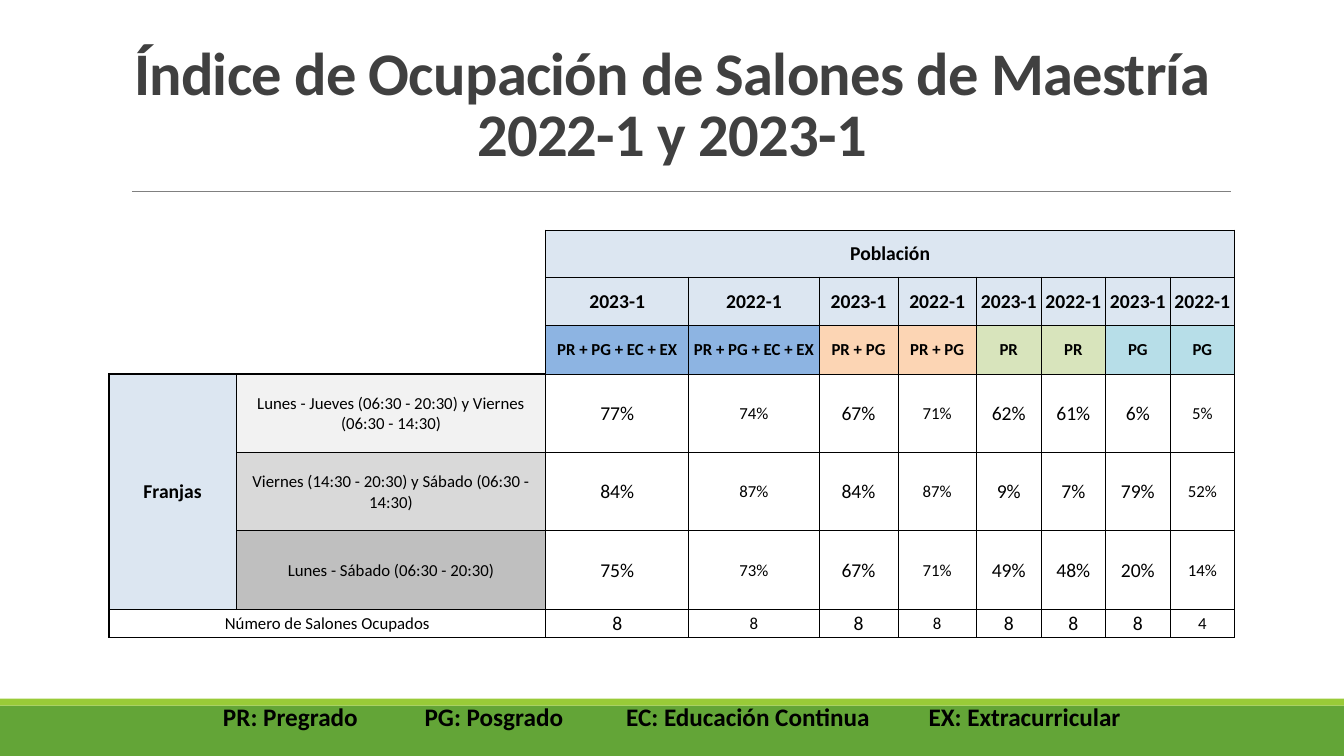
from dataclasses import dataclass

from lxml import etree
from pptx import Presentation
from pptx.dml.color import RGBColor
from pptx.enum.shapes import MSO_CONNECTOR, MSO_SHAPE
from pptx.enum.text import MSO_ANCHOR, PP_ALIGN
from pptx.oxml.ns import qn
from pptx.util import Pt

RECTANGLE = MSO_SHAPE.RECTANGLE
STRAIGHT = MSO_CONNECTOR.STRAIGHT
CENTER = PP_ALIGN.CENTER
MIDDLE, BOTTOM = MSO_ANCHOR.MIDDLE, MSO_ANCHOR.BOTTOM


@dataclass(frozen=True)
class Theme:
    font: str = "Calibri"
    title_size: float = 43.2
    legend_size: float = 18
    large: float = 14
    small: float = 12
    text: str = "000000"
    title: str = "404040"
    rule: str = "808080"
    band: str = "63A537"
    band_edge: str = "99CB38"
    blank: str = "FFFFFF"
    header: str = "DCE6F1"
    populations: tuple = ("8DB4E2", "FCD5B4", "D8E4BC", "B7DEE8")
    slots: tuple = ("F2F2F2", "D9D9D9", "BFBFBF")


@dataclass(frozen=True)
class Box:
    left: float
    top: float
    width: float
    height: float

    def lengths(self):
        return [Pt(n) for n in (self.left, self.top, self.width, self.height)]


THEME = Theme()
TITLE = "Índice de Ocupación de Salones de Maestría\v2022-1 y 2023-1"
LEGEND = "PR: Pregrado\tPG: Posgrado\tEC: Educación Continua\tEX: Extracurricular"
LEGEND_TABS = (144, 288, 504)
POPULATIONS = ("PR + PG + EC + EX", "PR + PG", "PR", "PG")
SLOTS = (
    "Lunes - Jueves (06:30 - 20:30) y Viernes (06:30 - 14:30)",
    "Viernes (14:30 - 20:30) y Sábado (06:30 - 14:30)",
    "Lunes - Sábado (06:30 - 20:30)",
)
RATES = (
    (77, 74, 67, 71, 62, 61, 6, 5),
    (84, 87, 84, 87, 9, 7, 79, 52),
    (75, 73, 67, 71, 49, 48, 20, 14),
)
ROOMS = (8, 8, 8, 8, 8, 8, 8, 4)
COLUMN_WIDTHS = (91, 221, 102.2, 93.2, 56.2, 56.2, 46.1, 46.1, 46.1, 46.1)
ROW_HEIGHTS = (33.6, 34.2, 35, 56, 56, 56, 20)
SMALL_COLUMNS = (3, 5, 9)
FIRST_SLOT, LAST_ROW, LAST_COLUMN = 3, 6, 9
THICK, THIN, NONE = 1, 0.5, 0


def color(code):
    return RGBColor.from_string(code)


def style(para, size, code, bold=False):
    para.alignment = CENTER
    font = para.font
    font.name, font.size, font.bold = THEME.font, Pt(size), bold
    font.color.rgb = color(code)


def add_band(page, box, edge_height):
    """Draw the footer band with a lighter strip along its top."""
    edge = Box(box.left, box.top, box.width, edge_height)
    body = Box(box.left, box.top + edge_height, box.width, box.height - edge_height)
    for part, code in ((body, THEME.band), (edge, THEME.band_edge)):
        shape = page.shapes.add_shape(RECTANGLE, *part.lengths())
        shape.shadow.inherit = False
        shape.fill.solid()
        shape.fill.fore_color.rgb = color(code)
        shape.line.fill.background()


def add_rule(page, box):
    left, top, width, _ = box.lengths()
    line = page.shapes.add_connector(STRAIGHT, left, top, left + width, top)
    line.line.color.rgb = color(THEME.rule)
    line.line.width = Pt(0.5)
    etree.SubElement(line._element.spPr, qn("a:effectLst"))


def add_text(page, box, text, size, code):
    """Add a bold centred text box and return its frame."""
    frame = page.shapes.add_textbox(*box.lengths()).text_frame
    frame.word_wrap = True
    frame.text = text
    style(frame.paragraphs[0], size, code, bold=True)
    return frame


def add_title(page, box):
    frame = add_text(page, box, TITLE, THEME.title_size, THEME.title)
    frame.vertical_anchor = BOTTOM
    para = frame.paragraphs[0]
    para.line_spacing = 0.85
    for span in para.runs:
        span._r.get_or_add_rPr().set("spc", "-50")


def add_legend(page, box):
    frame = add_text(page, box, LEGEND, THEME.legend_size, THEME.text)
    properties = frame.paragraphs[0]._p.get_or_add_pPr()
    tabs = etree.Element(qn("a:tabLst"))
    for position in LEGEND_TABS:
        etree.SubElement(tabs, qn("a:tab"), pos=str(Pt(position)), algn="l")
    properties.insert_element_before(tabs, "a:defRPr", "a:extLst")


def cell_content(row, column):
    """Return text, size, boldness and fill for one table cell."""
    series = column - 2
    if row < FIRST_SLOT and series < 0:
        return "", THEME.small, False, THEME.blank
    if row == 0:
        return "Población" if series == 0 else "", THEME.large, True, THEME.header
    if row == 1:
        return ("2023-1", "2022-1")[series % 2], THEME.large, True, THEME.header
    if row == 2:
        pair = series // 2
        return POPULATIONS[pair], THEME.small, True, THEME.populations[pair]
    slot = row - FIRST_SLOT
    if series >= 0:
        size = THEME.small if column in SMALL_COLUMNS else THEME.large
        text = str(ROOMS[series]) if row == LAST_ROW else f"{RATES[slot][series]}%"
        return text, size, False, None
    if row == LAST_ROW:
        text = "Número de Salones Ocupados" if column == 0 else ""
        return text, THEME.small, False, None
    if column == 0:
        return "Franjas" if slot == 0 else "", THEME.large, True, THEME.header
    return SLOTS[slot], THEME.small, False, THEME.slots[slot]


def cell_borders(row, column):
    """Return the left, right, top and bottom widths; columns go in pairs."""
    if row < FIRST_SLOT and column < 2:
        return (NONE, THICK if column == 1 else NONE, NONE,
                THICK if row == FIRST_SLOT - 1 else NONE)
    left, right = (THIN, THICK) if column % 2 else (THICK, THIN)
    top = THICK if row < 2 or (row == FIRST_SLOT and column < 2) else THIN
    bottom = THICK if row in (0, LAST_ROW) else THIN
    return left, right, top, bottom


def set_borders(cell, widths):
    properties = cell._tc.get_or_add_tcPr()
    for place, (side, width) in enumerate(zip("LRTB", widths)):
        line = etree.Element(qn(f"a:ln{side}"), w=str(Pt(width)))
        if width:
            fill = etree.SubElement(line, qn("a:solidFill"))
            etree.SubElement(fill, qn("a:srgbClr"), val=THEME.text)
        else:
            etree.SubElement(line, qn("a:noFill"))
        properties.insert(place, line)


def fill_cell(cell, row, column):
    text, size, bold, code = cell_content(row, column)
    cell.text = text
    cell.vertical_anchor = MIDDLE
    cell.margin_left = cell.margin_right = cell.margin_top = Pt(0.75)
    cell.margin_bottom = 0
    style(cell.text_frame.paragraphs[0], size, THEME.text, bold)
    if code:
        cell.fill.solid()
        cell.fill.fore_color.rgb = color(code)
    else:
        cell.fill.background()
    set_borders(cell, cell_borders(row, column))


def add_occupancy_table(page, box):
    table = page.shapes.add_table(
        len(ROW_HEIGHTS), len(COLUMN_WIDTHS), *box.lengths()).table
    table.first_row = table.horz_banding = False
    for column, width in zip(table.columns, COLUMN_WIDTHS):
        column.width = Pt(width)
    for index, height in enumerate(ROW_HEIGHTS):
        table.rows[index].height = Pt(height)
        for column in range(len(COLUMN_WIDTHS)):
            fill_cell(table.cell(index, column), index, column)
    table.cell(0, 2).merge(table.cell(0, LAST_COLUMN))
    table.cell(FIRST_SLOT, 0).merge(table.cell(LAST_ROW - 1, 0))
    table.cell(LAST_ROW, 0).merge(table.cell(LAST_ROW, 1))


def main():
    deck = Presentation()
    deck.slide_width, deck.slide_height = Pt(960), Pt(540)
    page = deck.slides.add_slide(deck.slide_layouts[6])
    add_band(page, Box(0, 499, 960, 41), edge_height=5)
    add_rule(page, Box(94.3, 136.6, 784.8, 0))
    add_legend(page, Box(147.6, 497.5, 664.6, 29))
    add_title(page, Box(66, 46, 828, 78.5))
    add_occupancy_table(
        page, Box(77.8, 164.4, sum(COLUMN_WIDTHS), sum(ROW_HEIGHTS)))
    deck.save("out.pptx")


if __name__ == "__main__":
    main()
